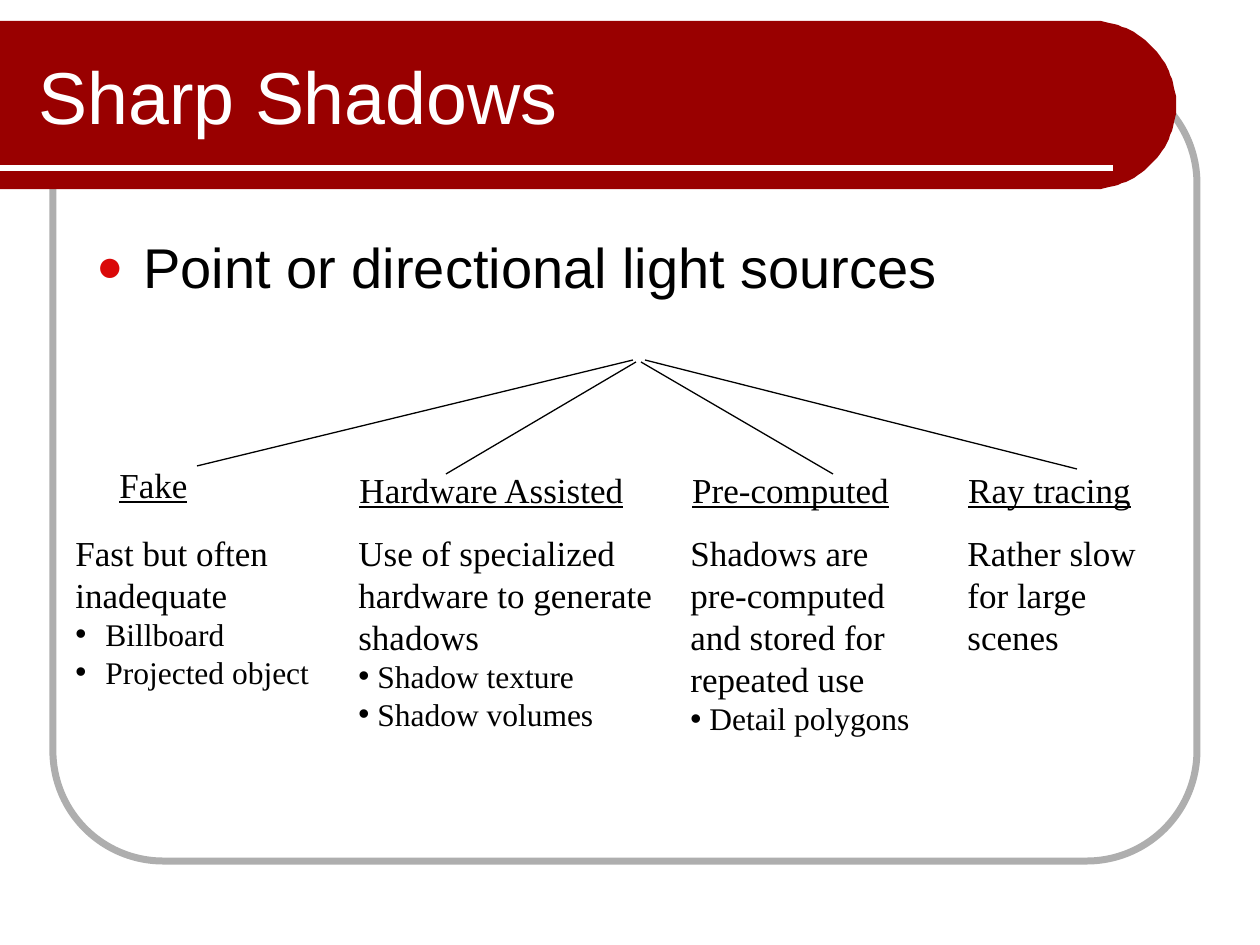
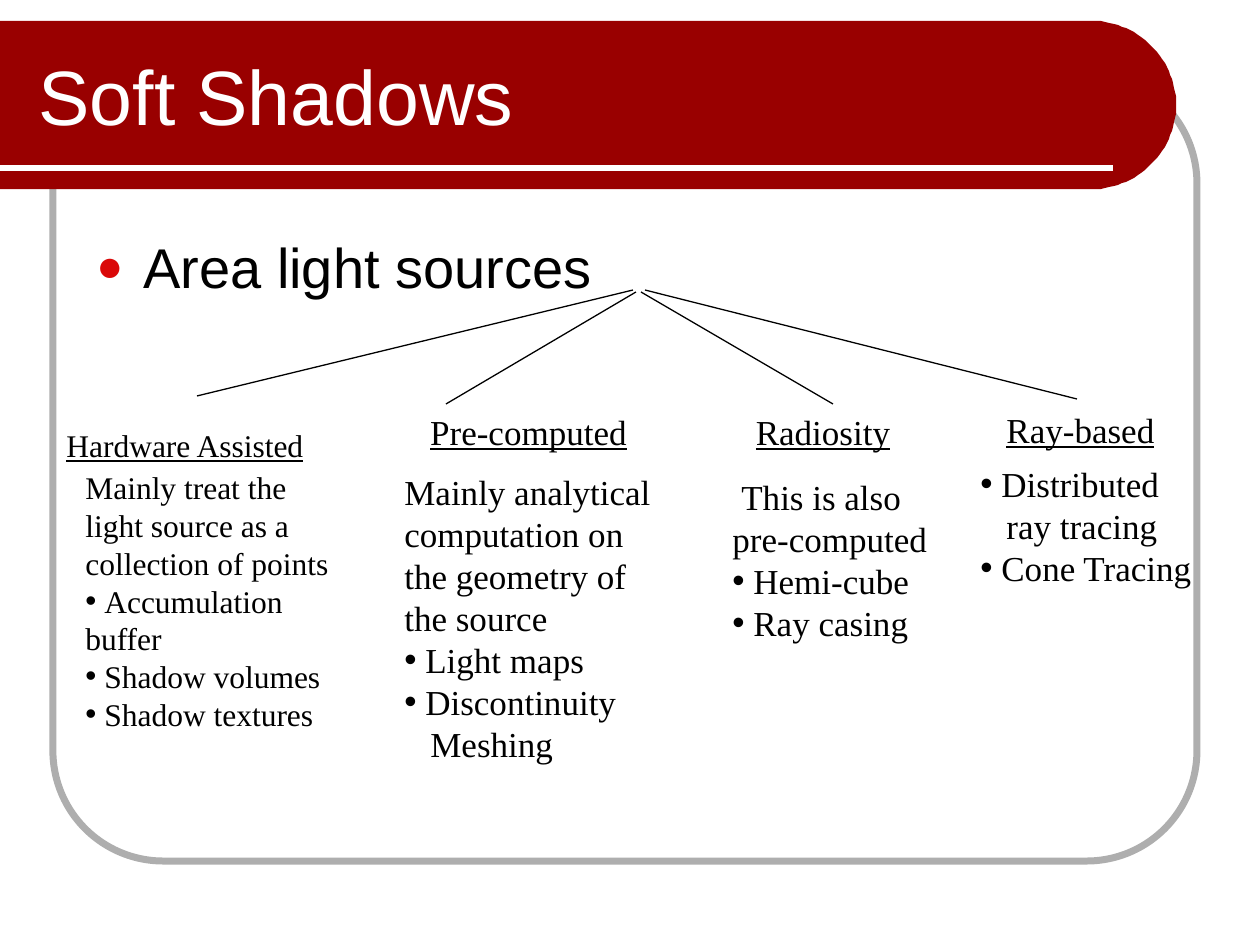
import collections
import math

import lxml.etree
import pptx
import pptx.dml.color
import pptx.enum.shapes
import pptx.enum.text
import pptx.oxml.ns
import pptx.util

EMU_PER_PX = 914400 / 126
RED, GREY, BULLET_RED = "990000", "AEAEAE", "DA0808"
BLACK, WHITE = "000000", "FFFFFF"
SANS, SERIF = "Arial", "Times New Roman"

FRAME = (53, 73, 1144, 788)
BAND_TOP, BAND_HEIGHT, BAND_RIGHT = 21, 168, 1176
RULE_Y, RULE_RIGHT = 168, 1113
TITLE_BOX = (26, 32, 982, 126)
TOPIC_BOX = (84, 226, 1092, 90)
BRANCHES = [
    ((633, 0), (197, 106)),
    ((645, 0), (1077, 109)),
    ((636, 2), (446, 114)),
    ((641, 2), (833, 114)),
]

Column = collections.namedtuple(
    "Column", "heading heading_box body_box lines size bullet_size bullet_indent"
)

SLIDES = [
    {
        "title": "Sharp Shadows",
        "title_size": 42,
        "topic": "Point or directional light sources",
        "fan_top": 360,
        "columns": [
            Column("Fake", (102, 457, 103, 55), (63, 525, 284, 174),
                   ["Fast but often", "inadequate", "• Billboard", "• Projected object"],
                   20, 18, 30),
            Column("Hardware Assisted", (346, 462, 291, 55), (346, 525, 330, 224),
                   ["Use of specialized", "hardware to generate", "shadows",
                    "• Shadow texture", "• Shadow volumes"],
                   20, 18, 19),
            Column("Pre-computed", (679, 462, 223, 55), (678, 525, 265, 224),
                   ["Shadows are", "pre-computed", "and stored for", "repeated use",
                    "• Detail polygons"],
                   20, 18, 19),
            Column("Ray tracing", (955, 462, 189, 55), (955, 525, 220, 140),
                   ["Rather slow", "for large scenes"],
                   20, 20, 21),
        ],
    },
    {
        "title": "Soft Shadows",
        "title_size": 44,
        "topic": "Area light sources",
        "fan_top": 290,
        "columns": [
            Column("Hardware Assisted", (53, 420, 264, 50), (73, 462, 290, 280),
                   ["Mainly treat the", "light source as a", "collection of points",
                    "• Accumulation", "buffer", "• Shadow volumes", "• Shadow textures"],
                   18, 18, 19),
            Column("Pre-computed", (417, 404, 223, 55), (392, 464, 290, 310),
                   ["Mainly analytical", "computation on", "the geometry of", "the source",
                    "• Light maps", "• Discontinuity", ("Meshing", 26)],
                   20, 20, 21),
            Column("Radiosity", (743, 404, 160, 55), (720, 469, 235, 183),
                   [("This is also", 9), "pre-computed", "• Hemi-cube", "• Ray casing"],
                   20, 20, 21),
            Column("Ray-based", (993, 402, 175, 55), (968, 456, 255, 140),
                   ["• Distributed", ("ray tracing", 26), "• Cone Tracing"],
                   20, 20, 21),
        ],
    },
]


def px(length):
    return pptx.util.Emu(round(length * EMU_PER_PX))


def box(values):
    return [px(value) for value in values]


def rgb(hex_color):
    return pptx.dml.color.RGBColor.from_string(hex_color)


def add_bullet(paragraph, character, indent, color=None, percent=None):
    properties = paragraph._p.get_or_add_pPr()
    properties.set("marL", str(px(indent)))
    properties.set("indent", str(-px(indent)))

    def add(parent, tag, **attributes):
        return lxml.etree.SubElement(parent, pptx.oxml.ns.qn(tag), **attributes)

    if color:
        add(add(properties, "a:buClr"), "a:srgbClr", val=color)
    if percent:
        add(properties, "a:buSzPct", val=str(percent * 1000))
    add(properties, "a:buFont", typeface=SANS)
    add(properties, "a:buChar", char=character)


def write_text(paragraph, text, size=20, font=SERIF, color=BLACK, underline=None,
               align=pptx.enum.text.PP_ALIGN.LEFT):
    paragraph.alignment = align
    run = paragraph.add_run()
    run.text = text
    run.font.size = pptx.util.Pt(size)
    run.font.name = font
    run.font.color.rgb = rgb(color)
    run.font.underline = underline


def add_text_frame(slide, position, wrap=True):
    text_frame = slide.shapes.add_textbox(*box(position)).text_frame
    text_frame.word_wrap = wrap
    return text_frame


def add_line(slide, start, end, color, width):
    connector = slide.shapes.add_connector(
        pptx.enum.shapes.MSO_CONNECTOR.STRAIGHT, *box(start), *box(end))
    connector.line.color.rgb = rgb(color)
    connector.line.width = pptx.util.Pt(width)
    lxml.etree.SubElement(connector._element.spPr, pptx.oxml.ns.qn("a:effectLst"))


def add_background(slide):
    frame = slide.shapes.add_shape(
        pptx.enum.shapes.MSO_SHAPE.ROUNDED_RECTANGLE, *box(FRAME))
    frame.adjustments[0] = 0.14
    frame.shadow.inherit = False
    frame.fill.background()
    frame.line.color.rgb = rgb(GREY)
    frame.line.width = pptx.util.Pt(4)

    radius = BAND_HEIGHT / 2
    center_x, center_y = BAND_RIGHT - radius, BAND_TOP + radius
    arc = [(center_x + radius * math.cos(math.radians(angle)),
            center_y + radius * math.sin(math.radians(angle)))
           for angle in range(-90, 91, 3)]
    builder = slide.shapes.build_freeform(0, BAND_TOP, scale=EMU_PER_PX)
    builder.add_line_segments(arc + [(0, BAND_TOP + BAND_HEIGHT)], close=True)
    band = builder.convert_to_shape()
    band.shadow.inherit = False
    band.fill.solid()
    band.fill.fore_color.rgb = rgb(RED)
    band.line.fill.background()
    add_line(slide, (0, RULE_Y), (RULE_RIGHT, RULE_Y), WHITE, 3)


def add_title(slide, text, size):
    title = slide.shapes.title
    title.left, title.top, title.width, title.height = box(TITLE_BOX)
    title._element.getparent().append(title._element)
    title.text_frame.auto_size = pptx.enum.text.MSO_AUTO_SIZE.NONE
    title.text_frame.vertical_anchor = pptx.enum.text.MSO_ANCHOR.MIDDLE
    write_text(title.text_frame.paragraphs[0], text, size=size, font=SANS, color=WHITE)


def add_topic(slide, text):
    paragraph = add_text_frame(slide, TOPIC_BOX).paragraphs[0]
    add_bullet(paragraph, "●", 47, color=BULLET_RED, percent=80)
    write_text(paragraph, text, size=32, font=SANS)


def add_column(slide, column):
    heading = add_text_frame(slide, column.heading_box, wrap=False)
    write_text(heading.paragraphs[0], column.heading, size=column.size,
               underline=True, align=pptx.enum.text.PP_ALIGN.CENTER)
    body = add_text_frame(slide, column.body_box)
    for index, line in enumerate(column.lines):
        paragraph = body.add_paragraph() if index else body.paragraphs[0]
        text, indent = line if isinstance(line, tuple) else (line, 0)
        size = column.size
        if text.startswith("• "):
            text, size = text[2:], column.bullet_size
            add_bullet(paragraph, "•", column.bullet_indent)
        elif indent:
            paragraph._p.get_or_add_pPr().set("marL", str(px(indent)))
        write_text(paragraph, text, size=size)


def main():
    presentation = pptx.Presentation()
    presentation.slide_width = pptx.util.Inches(10)
    presentation.slide_height = pptx.util.Inches(7.5)
    for content in SLIDES:
        slide = presentation.slides.add_slide(presentation.slide_layouts[5])
        add_background(slide)
        add_title(slide, content["title"], content["title_size"])
        add_topic(slide, content["topic"])
        top = content["fan_top"]
        for (start_x, start_y), (end_x, end_y) in BRANCHES:
            add_line(slide, (start_x, top + start_y), (end_x, top + end_y), BLACK, 0.75)
        for column in content["columns"]:
            add_column(slide, column)
    presentation.save("out.pptx")


if __name__ == "__main__":
    main()
